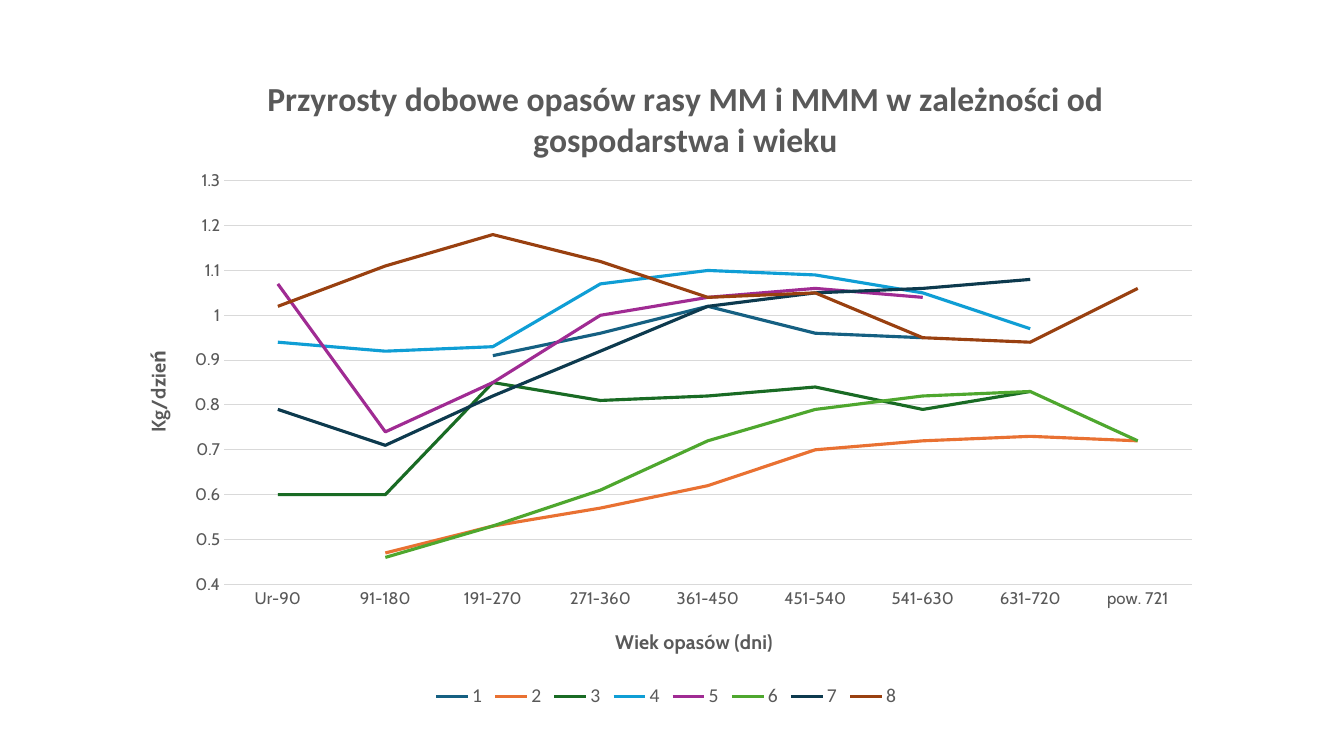
"""Build a slide with a line chart of daily weight gains by farm and age."""
from dataclasses import dataclass

from lxml import etree
from pptx import Presentation
from pptx.chart.data import CategoryChartData
from pptx.dml.color import RGBColor
from pptx.enum.chart import XL_CHART_TYPE, XL_LEGEND_POSITION, XL_TICK_MARK
from pptx.oxml.ns import qn
from pptx.util import Cm, Pt

LINE = XL_CHART_TYPE.LINE
BOTTOM = XL_LEGEND_POSITION.BOTTOM
NO_TICK = XL_TICK_MARK.NONE
BLANK_LAYOUT = 6


@dataclass(frozen=True)
class Theme:
    """Hold the fonts, colours and sizes of the slide."""
    body_font: str = "Cabin"
    title_font: str = "Calibri"
    text: str = "595959"
    grid: str = "D9D9D9"
    title_size: int = 24
    label_size: int = 14
    tick_size: int = 12
    series_width: float = 2.25
    grid_width: float = 0.75


THEME = Theme()

AGES = ["Ur-90", "91-180", "191-270", "271-360", "361-450",
        "451-540", "541-630", "631-720", "pow. 721"]

FARMS = {
    "1": ("156082", [None, None, 0.91, 0.96, 1.02, 0.96, 0.95, None, None]),
    "2": ("E97132", [None, 0.47, 0.53, 0.57, 0.62, 0.7, 0.72, 0.73, 0.72]),
    "3": ("196B24", [0.6, 0.6, 0.85, 0.81, 0.82, 0.84, 0.79, 0.83, None]),
    "4": ("0F9ED5", [0.94, 0.92, 0.93, 1.07, 1.1, 1.09, 1.05, 0.97, None]),
    "5": ("A02B93", [1.07, 0.74, 0.85, 1, 1.04, 1.06, 1.04, None, None]),
    "6": ("4EA72E", [None, 0.46, 0.53, 0.61, 0.72, 0.79, 0.82, 0.83, 0.72]),
    "7": ("0D3A4E", [0.79, 0.71, 0.82, 0.92, 1.02, 1.05, 1.06, 1.08, None]),
    "8": ("994010", [1.02, 1.11, 1.18, 1.12, 1.04, 1.05, 0.95, 0.94, 1.06]),
}


def set_attributes(target, values):
    """Set every attribute in a dict of format values."""
    for name, value in values.items():
        setattr(target, name, value)


def format_font(font, size, name=THEME.body_font, bold=False):
    """Format a font in the text colour."""
    set_attributes(font, {"size": Pt(size), "name": name, "bold": bold})
    font.color.rgb = RGBColor.from_string(THEME.text)


def format_line(line, color, width):
    """Give a line its colour and width."""
    line.color.rgb = RGBColor.from_string(color)
    line.width = Pt(width)


def place(element, index, **layout_values):
    """Put a manual layout, in fractions of the chart, into a chart part."""
    for old_layout in element.findall(qn("c:layout")):
        element.remove(old_layout)
    layout = etree.Element(qn("c:layout"))
    manual = etree.SubElement(layout, qn("c:manualLayout"))
    for name, value in layout_values.items():
        etree.SubElement(manual, qn(f"c:{name}")).set("val", str(value))
    element.insert(index, layout)


def write_title(owner_title, text, left, top, size, name=THEME.body_font):
    """Write and place a bold chart or axis title."""
    paragraph = owner_title.text_frame.paragraphs[0]
    run = paragraph.add_run()
    run.text = text
    format_font(run.font, size, name, bold=True)
    place(owner_title._element, 1, xMode="edge", yMode="edge", x=left, y=top)


def format_axis(axis, title, left, top):
    """Format the labels, ticks and title of an axis."""
    set_attributes(axis, {"major_tick_mark": NO_TICK, "minor_tick_mark": NO_TICK})
    format_font(axis.tick_labels.font, THEME.tick_size)
    write_title(axis.axis_title, title, left, top, THEME.label_size)


def format_axes(chart):
    """Format the age axis and the weight gain axis."""
    format_axis(chart.category_axis, "Wiek opasów (dni)", 0.45, 0.87)
    format_line(chart.category_axis.format.line, THEME.grid, THEME.grid_width)
    gain_axis = chart.value_axis
    format_axis(gain_axis, "Kg/dzień", 0.02, 0.46)
    set_attributes(gain_axis, {"minimum_scale": 0.4, "maximum_scale": 1.3,
                               "major_unit": 0.1, "has_major_gridlines": True})
    gain_axis.format.line.fill.background()
    format_line(gain_axis.major_gridlines.format.line, THEME.grid, THEME.grid_width)


def format_series(plot):
    """Colour the line of each farm."""
    plot.vary_by_categories = False
    for series, (color, _) in zip(plot.series, FARMS.values()):
        series.smooth = False
        format_line(series.format.line, color, THEME.series_width)


def add_gain_chart(slide):
    """Add the line chart of daily gains."""
    data = CategoryChartData()
    data.categories = AGES
    for farm, (_, gains) in FARMS.items():
        data.add_series(farm, gains)
    chart = slide.shapes.add_chart(
        LINE, Cm(3), Cm(0.91), Cm(27.58), Cm(17.04), data).chart
    format_font(chart.font, THEME.tick_size)
    set_attributes(chart, {"has_title": True, "has_legend": True})
    write_title(chart.chart_title,
                "Przyrosty dobowe opasów rasy MM i MMM w zależności od gospodarstwa i wieku",
                0.13, 0.05, THEME.title_size, THEME.title_font)
    set_attributes(chart.legend, {"position": BOTTOM, "include_in_layout": False})
    format_font(chart.legend.font, THEME.label_size, THEME.title_font)
    format_axes(chart)
    format_series(chart.plots[0])
    plot_area = chart._chartSpace.find(f".//{qn('c:plotArea')}")
    place(plot_area, 0, layoutTarget="inner", xMode="edge", yMode="edge",
          x=0.096, y=0.214, w=0.884, h=0.597)


def main():
    """Build and save the presentation."""
    presentation = Presentation()
    set_attributes(presentation, {"slide_width": Cm(33.87), "slide_height": Cm(19.05)})
    slide = presentation.slides.add_slide(presentation.slide_layouts[BLANK_LAYOUT])
    add_gain_chart(slide)
    presentation.save("out.pptx")


if __name__ == "__main__":
    main()
